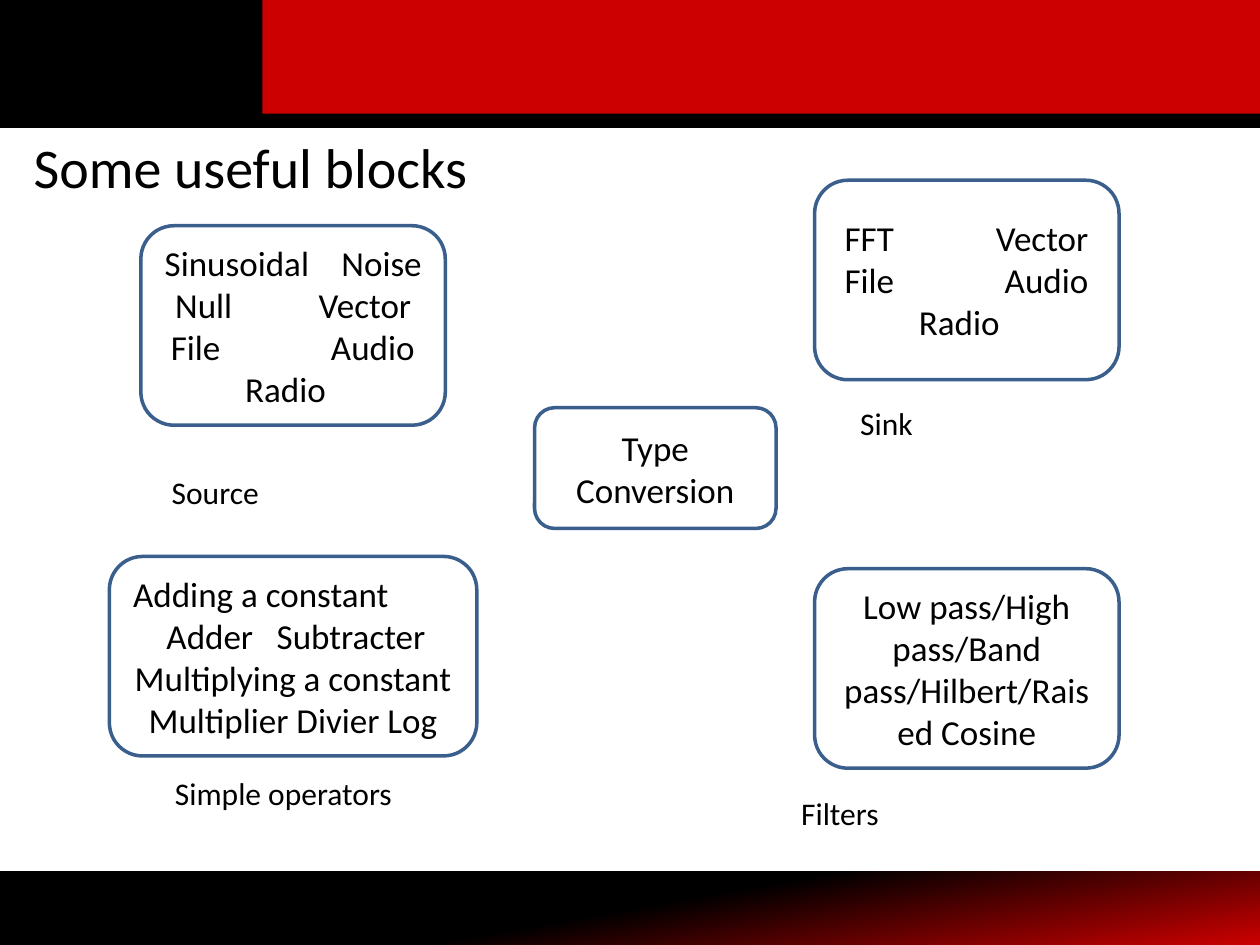
from pptx import Presentation
from pptx.dml.color import RGBColor
from pptx.enum.shapes import MSO_SHAPE
from pptx.enum.text import MSO_ANCHOR, PP_ALIGN
from pptx.util import Pt
from lxml.etree import SubElement
from pptx.oxml.ns import qn

HEX = {"ink": "000000", "red": "CC0000", "edge": "3A5F8C"}


class Deck:
    """Holds the style and the current slide."""

    def __init__(self, show):
        self.font = "Calibri"
        self.slide = show.slides.add_slide(show.slide_layouts[1])
        title = self.slide.shapes.title
        title.element.getparent().remove(title.element)

    def color(self, name):
        return RGBColor.from_string(HEX[name])

    def run(self, para, text, size):
        run = para.add_run()
        run.text = text
        run.font.name = self.font
        run.font.size = Pt(size)
        run.font.color.rgb = self.color("ink")

    def shape(self, kind, box):
        shape = self.slide.shapes.add_shape(kind, *map(Pt, box))
        shape.shadow.inherit = False
        return shape

    def band(self, box, fill, line=None):
        band = self.shape(MSO_SHAPE.RECTANGLE, box)
        band.fill.solid()
        band.fill.fore_color.rgb = self.color(fill)
        if line:
            band.line.color.rgb = self.color(fill)
            band.line.width = Pt(line)
        else:
            band.line.fill.background()

    def fade(self, box):
        foot = self.shape(MSO_SHAPE.RECTANGLE, box)
        foot.line.fill.background()
        foot.fill.gradient()
        foot.fill.gradient_angle = 280
        for stop, at, name in zip(foot.fill.gradient_stops, (0.5, 1), ("ink", "red")):
            stop.position = at
            stop.color.rgb = self.color(name)

    def body(self, box, text):
        body = self.slide.placeholders[1]
        body.left, body.top, body.width, body.height = map(Pt, box)
        para = body.text_frame.paragraphs[0]
        para.space_before = Pt(0)
        props = para._p.get_or_add_pPr()
        props.set("marL", "0")
        props.set("indent", "0")
        SubElement(props, qn("a:buNone"))
        self.run(para, text, 32)

    def row(self, para, cells):
        para.alignment = PP_ALIGN.LEFT
        tabs = SubElement(para._p.get_or_add_pPr(), qn("a:tabLst"))
        for at, text in cells:
            SubElement(tabs, qn("a:tab"), pos=str(Pt(at)), algn="l")
            self.run(para, "\t" + text, 20)

    def block(self, box, rows):
        block = self.shape(MSO_SHAPE.ROUNDED_RECTANGLE, box)
        block.fill.background()
        block.line.color.rgb = self.color("edge")
        block.line.width = Pt(2)
        frame = block.text_frame
        frame.word_wrap = True
        frame.vertical_anchor = MSO_ANCHOR.MIDDLE
        for i, row in enumerate(rows):
            para = frame.add_paragraph() if i else frame.paragraphs[0]
            if isinstance(row, str):
                para.alignment = PP_ALIGN.CENTER
                self.run(para, row, 20)
            else:
                self.row(para, row)

    def label(self, left, top, width, text):
        label = self.slide.shapes.add_textbox(Pt(left), Pt(top), Pt(width), Pt(29))
        label.text_frame.word_wrap = True
        para = label.text_frame.paragraphs[0]
        para.alignment = PP_ALIGN.CENTER
        self.run(para, text, 18)


def main():
    show = Presentation()
    show.slide_width, show.slide_height = Pt(720), Pt(540)
    deck = Deck(show)
    deck.fade((0, 498, 720, 42))
    deck.band((0, 0, 720, 72), "ink", 2)
    deck.band((150, -1, 570, 66), "red")
    deck.body((12, 72, 702, 420), "Some useful blocks")

    wide, high = 174, 114
    files = [(4.5, "File"), (96, "Audio")]
    last = [(47, "Radio")]
    deck.block((80.5, 129, wide, high), [
        [(1, "Sinusoidal"), (102, "Noise")],
        [(7, "Null"), (89, "Vector")],
        files, last])
    deck.block((465.5, 103, wide, high), [
        [(4.5, "FFT"), (91, "Vector")], files, last])
    deck.block((62.5, 318, 210, high), [
        [(1, "Adding a constant")],
        [(20, "Adder"), (83, "Subtracter")],
        "Multiplying a constant", "Multiplier Divier Log"])
    deck.block((305.5, 233, 138, 69), ["Type Conversion"])
    deck.block((465.5, 325, wide, high), [
        "Low pass/High pass/Band pass/Hilbert/Raised Cosine"])

    for spot in (
        (60, 266.5, 126, "Source"),
        (443.5, 227.5, 126, "Sink"),
        (90, 439, 144, "Simple operators"),
        (408, 450, 144, "Filters"),
    ):
        deck.label(*spot)
    show.save("out.pptx")


if __name__ == "__main__":
    main()
